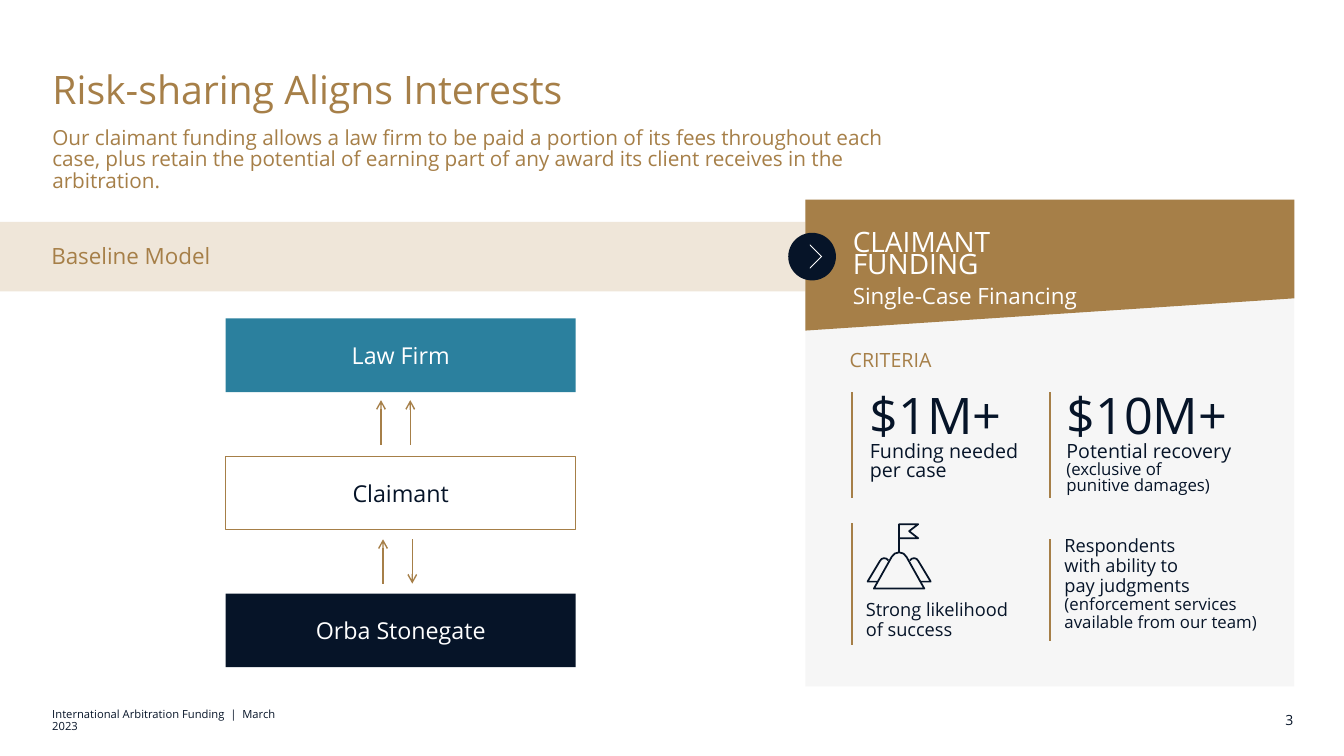
"""Build the risk-sharing slide with its funding diagram and criteria panel."""
from dataclasses import dataclass

import pptx
import pptx.dml.color
import pptx.enum.shapes
import pptx.enum.text
import pptx.oxml
import pptx.oxml.ns
import pptx.util

SHAPES = pptx.enum.shapes.MSO_SHAPE
ALIGN = pptx.enum.text.PP_ALIGN
ANCHOR = pptx.enum.text.MSO_ANCHOR
WIDTH, HEIGHT = pptx.util.Inches(13.33), pptx.util.Inches(7.5)
COLUMNS, ROWS = 40, 30


@dataclass(frozen=True)
class Theme:
    """Colours, type sizes and line spacing of the slide."""
    font: str = "Open Sans"
    gold: str = "A67F48"
    sand: str = "EFE6D9"
    navy: str = "061428"
    teal: str = "2B809E"
    mist: str = "F6F6F6"
    white: str = "FFFFFF"
    title: float = 28
    figure: float = 36
    heading: float = 20
    label: float = 16
    node: float = 16.6
    lead: float = 14.8
    caption: float = 14
    body: float = 13
    small: float = 12
    page: float = 10
    footer: float = 8
    spacing: float = 0.9
    tight: float = 0.8


THEME = Theme()


def across(columns):
    """Turn grid columns into a length."""
    return round(WIDTH * columns / COLUMNS)


def down(rows):
    """Turn grid rows into a length."""
    return round(HEIGHT * rows / ROWS)


def place(area):
    """Turn left, top, width and height on the grid into lengths."""
    left, top, width, height = area
    return across(left), down(top), across(width), down(height)


def rgb(colour):
    """Make a colour from its hex code."""
    return pptx.dml.color.RGBColor.from_string(colour)


def style(font, size, colour):
    """Apply the theme font with a size and a colour."""
    font.name = THEME.font
    font.size = pptx.util.Pt(size)
    font.color.rgb = rgb(colour)


def write(para, spans, colour, spacing=THEME.spacing, align=ALIGN.LEFT):
    """Fill a paragraph with (text, size) spans, breaking lines at newlines."""
    para.alignment = align
    para.line_spacing = spacing
    for text, size in spans:
        for index, line in enumerate(text.split("\n")):
            if index:
                para.add_line_break()
            if line:
                span = para.add_run()
                span.text = line
                style(span.font, size, colour)


def add_text(page, area, paragraphs, colour, spacing=THEME.spacing, inset=(0, 0),
             anchor=ANCHOR.TOP, align=ALIGN.LEFT, gap=0):
    """Add a wrapping text box holding one or more paragraphs of spans."""
    frame = page.shapes.add_textbox(*place(area)).text_frame
    frame.word_wrap = True
    frame.vertical_anchor = anchor
    frame.margin_left = frame.margin_right = pptx.util.Inches(inset[0])
    frame.margin_top = frame.margin_bottom = pptx.util.Inches(inset[1])
    for index, spans in enumerate(paragraphs):
        para = frame.add_paragraph() if index else frame.paragraphs[0]
        if index:
            para.space_before = pptx.util.Pt(gap)
        write(para, spans, colour, spacing, align)


def paint(shape, fill=None, line=None, weight=0.75):
    """Set a shape's fill and outline and take its shadow away."""
    shape.shadow.inherit = False
    if fill:
        shape.fill.solid()
        shape.fill.fore_color.rgb = rgb(fill)
    else:
        shape.fill.background()
    if line:
        shape.line.color.rgb = rgb(line)
        shape.line.width = pptx.util.Pt(weight)
    else:
        shape.line.fill.background()
    return shape


def add_block(page, kind, area, fill, line=None):
    """Add a preset shape on the grid."""
    return paint(page.shapes.add_shape(kind, *place(area)), fill, line)


def add_outline(page, points, fill=None, line=None, weight=0.75, close=True):
    """Add a freeform through grid points."""
    start, *rest = [(across(x), down(y)) for x, y in points]
    builder = page.shapes.build_freeform(*start, scale=1.0)
    builder.add_line_segments(rest, close=close)
    return paint(builder.convert_to_shape(), fill, line, weight)


def add_rule(page, x, top, bottom, weight, arrow=False):
    """Add a vertical gold line, with an arrowhead at its end if asked."""
    rule = page.shapes.add_connector(pptx.enum.shapes.MSO_CONNECTOR.STRAIGHT,
                                     across(x), down(top), across(x), down(bottom))
    rule.line.color.rgb = rgb(THEME.gold)
    rule.line.width = pptx.util.Pt(weight)
    if arrow:
        head = pptx.oxml.parse_xml(f'<a:tailEnd {pptx.oxml.ns.nsdecls("a")} type="arrow"/>')
        rule.line._get_or_add_ln().append(head)
    effects = pptx.oxml.parse_xml(f'<a:effectLst {pptx.oxml.ns.nsdecls("a")}/>')
    rule._element.spPr.append(effects)


def add_title(page):
    """Place and format the title and the lead text below it."""
    title = page.shapes.title
    title.left, title.top, title.width, title.height = place((1.26, 2.68, 37.53, 3.48))
    frame = title.text_frame
    frame.vertical_anchor = ANCHOR.TOP
    frame.margin_top = pptx.util.Inches(0.01)
    write(frame.paragraphs[0], [("Risk-sharing Aligns Interests", THEME.title)], THEME.gold, 0.95)
    lead = ("Our claimant funding allows a law firm to be paid a portion of its fees throughout "
            "each case, plus retain the potential of earning part of any award its client "
            "receives in the arbitration.")
    add_text(page, (1.26, 4.88, 26.55, 2.4), [[(lead, THEME.lead)]], THEME.gold, 0.87, (0.1, 0.05))


def add_diagram(page):
    """Draw the baseline band, the three parties and the arrows between them."""
    add_outline(page, [(0, 8.8), (25.02, 8.8), (24.75, 11.56), (0, 11.56)], THEME.sand)
    add_text(page, (1.53, 9.72, 20.58, 1.08), [[("Baseline Model", THEME.label)]], THEME.gold)
    parties = [("Law Firm", THEME.teal, None, THEME.white),
               ("Claimant", THEME.white, THEME.gold, THEME.navy),
               ("Orba Stonegate", THEME.navy, None, THEME.white)]
    for index, (name, fill, line, colour) in enumerate(parties):
        area = (6.72, 12.64 + 5.46 * index, 10.41, 2.92)
        frame = add_block(page, SHAPES.RECTANGLE, area, fill, line).text_frame
        frame.vertical_anchor = ANCHOR.MIDDLE
        write(frame.paragraphs[0], [(name, THEME.node)], colour, 1.0, ALIGN.CENTER)
    for x, start, end in [(11.34, 17.64, 15.88), (12.21, 17.64, 15.88),
                          (11.4, 23.16, 21.4), (12.27, 21.4, 23.16)]:
        add_rule(page, x, start, end, 1, arrow=True)


def add_mountain(page):
    """Draw the line icon of a flag on a mountain."""
    middle = 26.76
    flag = [(0, 21.92), (0, 20.8), (0.57, 20.8), (0.3, 21.08), (0.57, 21.36), (0, 21.36)]
    slope = [(0.75, 23.36), (0.22, 22.1), (0.13, 21.97), (0, 21.92)]
    peak = slope + [(-x, y) for x, y in reversed(slope[:-1])]
    ridge = [(0.32, 22.24), (0.38, 22.17), (0.45, 22.15), (0.52, 22.18), (0.57, 22.26),
             (0.94, 23.08), (0.65, 23.08)]
    mirrored = [(-x, y) for x, y in ridge]
    for points, close in [(flag, False), (peak, True), (ridge, False), (mirrored, False)]:
        add_outline(page, [(middle + x, y) for x, y in points],
                    line=THEME.navy, weight=1.25, close=close)


def add_panel(page):
    """Draw the claimant funding panel with its heading and four criteria."""
    add_block(page, SHAPES.RECTANGLE, (23.97, 7.92, 14.55, 19.32), THEME.mist)
    add_outline(page, [(23.97, 7.92), (38.52, 7.92), (38.52, 11.84), (23.97, 13.12)], THEME.gold)
    heading = [[("CLAIMANT\nFUNDING", THEME.heading)], [("Single-Case Financing", THEME.label)]]
    add_text(page, (25.38, 9.16, 8.16, 2.48), heading, THEME.white,
             pptx.util.Pt(15.7), (0, 0.05), gap=5.3)
    add_block(page, SHAPES.OVAL, (23.46, 9.24, 1.42, 1.89), THEME.navy)
    chevron = add_block(page, SHAPES.HALF_FRAME, (23.85, 9.84, 0.51, 0.68), THEME.white)
    chevron.adjustments[0] = chevron.adjustments[1] = 0.05
    chevron.rotation = 135
    add_text(page, (25.29, 13.92, 12.84, 0.96), [[("CRITERIA", THEME.caption)]], THEME.gold)

    for x, figure, spans in [
            (25.89, "$1M+", [("Funding needed\nper case", THEME.caption)]),
            (31.74, "$10M+", [("Potential recovery\n", THEME.caption),
                              ("(exclusive of\npunitive damages)", THEME.small)])]:
        add_text(page, (x, 15.04, 6.36, 2.6), [[(figure, THEME.figure)]], THEME.navy, 1.08)
        add_text(page, (x, 17.6, 6.24, 2.32), [spans], THEME.navy, THEME.tight)
    add_mountain(page)
    likelihood = [("Strong likelihood\nof success", THEME.body)]
    add_text(page, (25.77, 23.84, 4.7, 1.76), [likelihood], THEME.navy)
    respondents = [("Respondents\nwith ability to\npay judgments\n", THEME.body),
                   ("(enforcement services\navailable from our team)", THEME.small)]
    add_text(page, (31.68, 21.32, 6.3, 4.24), [respondents], THEME.navy)
    for x, top, bottom in [(25.35, 15.56, 19.76), (31.26, 15.56, 19.76),
                           (25.35, 20.76, 25.6), (31.26, 21.4, 25.44)]:
        add_rule(page, x, top, bottom, 1.5)


def add_footer(page):
    """Add the footer text and the page number."""
    for left, width, text, size, align in [
            (1.26, 8.01, "International Arbitration Funding  |  March 2023",
             THEME.footer, ALIGN.LEFT),
            (36.54, 2.25, "3", THEME.page, ALIGN.RIGHT)]:
        add_text(page, (left, 27.8, width, 1.6), [[(text, size)]], THEME.navy,
                 inset=(0.1, 0.05), anchor=ANCHOR.MIDDLE, align=align)


def main():
    """Build the deck and save it."""
    deck = pptx.Presentation()
    deck.slide_width, deck.slide_height = WIDTH, HEIGHT
    page = deck.slides.add_slide(deck.slide_layouts.get_by_name("Title Only"))
    add_title(page)
    add_diagram(page)
    add_panel(page)
    add_footer(page)
    deck.save("out.pptx")


if __name__ == "__main__":
    main()
